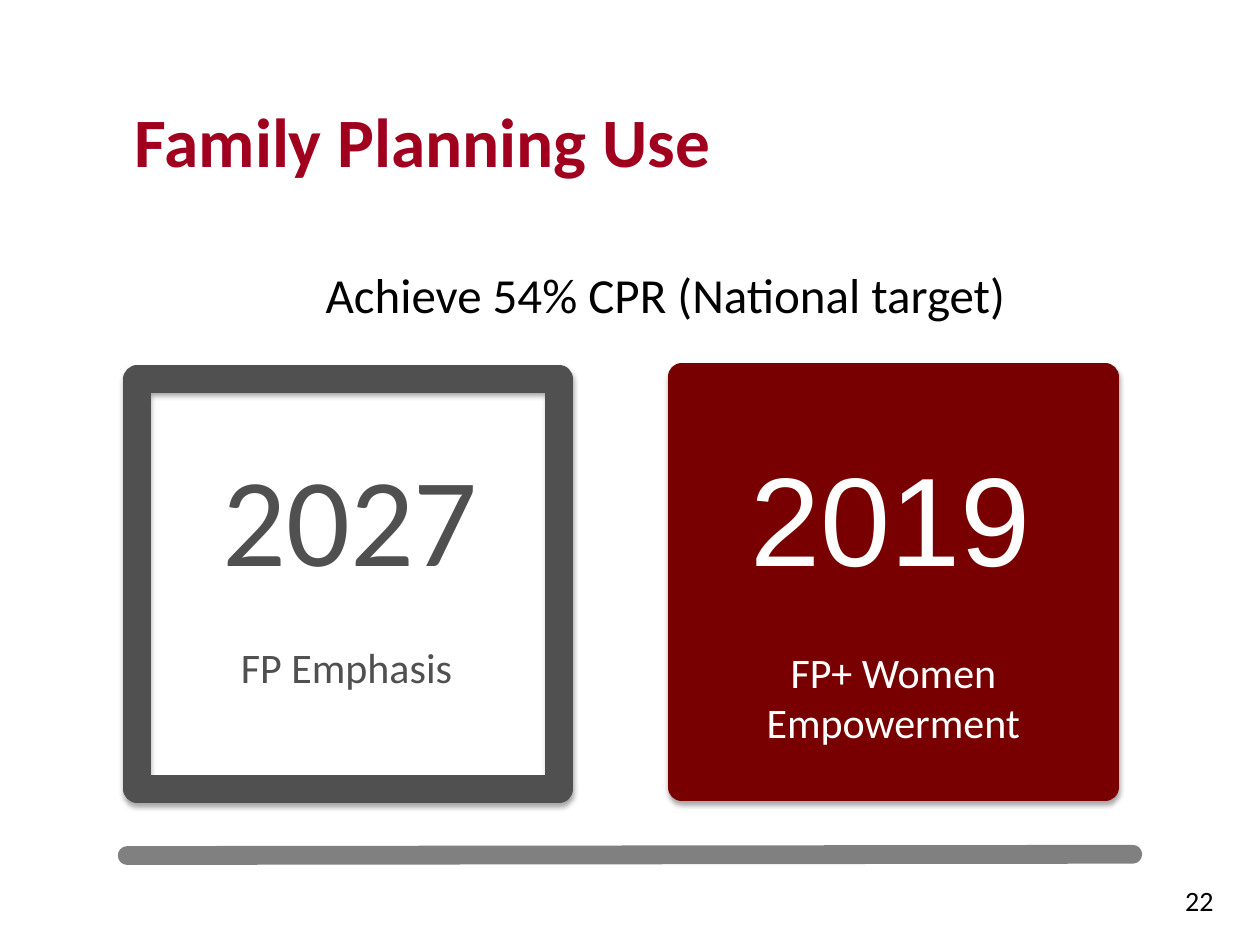
from dataclasses import dataclass

from lxml.etree import SubElement
from pptx import Presentation
from pptx.dml.color import RGBColor
from pptx.enum.shapes import MSO_CONNECTOR, MSO_SHAPE
from pptx.enum.text import PP_ALIGN
from pptx.oxml.ns import qn
from pptx.util import Inches, Pt


@dataclass(frozen=True)
class Theme:
    """Colours, fonts and type sizes of the slide."""
    title_red: str = "A0001E"
    card_red: str = "780000"
    card_grey: str = "505050"
    rule_grey: str = "808080"
    black: str = "000000"
    white: str = "FFFFFF"
    body_font: str = "Calibri"
    number_font: str = "Arial"
    title_size: float = 39.6
    target_size: float = 28
    year_size: float = 72
    label_size: float = 24
    page_size: float = 16
    frame_width: float = 16
    rule_width: float = 10.75


THEME = Theme()
COLUMNS, ROWS = 100, 75


def grid(*cells):
    """Turn grid cells, a tenth of an inch each, into lengths."""
    return [Inches(cell / 10) for cell in cells]


def add_text(page, area, text, size, color, align=PP_ALIGN.CENTER,
             font=THEME.body_font, bold=False):
    """Add a wrapped text box with one formatted paragraph."""
    frame = page.shapes.add_textbox(*grid(*area)).text_frame
    frame.word_wrap = True
    frame.text = text
    para = frame.paragraphs[0]
    para.alignment = align
    span = para.runs[0]
    span.font.name = font
    span.font.size = Pt(size)
    span.font.bold = bold
    span.font.color.rgb = RGBColor.from_string(color)


def style_line(line, color, width):
    """Give a line its colour, its width and a round join."""
    line.color.rgb = RGBColor.from_string(color)
    line.width = Pt(width)
    outline = line._get_or_add_ln()
    SubElement(outline, qn("a:round"))
    return outline


def add_soft_shadow(box):
    """Add a short downward shadow to a shape."""
    box.shadow.inherit = False
    effects = box._element.spPr.find(qn("a:effectLst"))
    shadow = SubElement(effects, qn("a:outerShdw"), blurRad=str(Pt(3.1)),
                        dist=str(Pt(1.8)), dir="5400000", rotWithShape="0")
    color = SubElement(shadow, qn("a:srgbClr"), val=THEME.black)
    SubElement(color, qn("a:alpha"), val="35000")


def add_card(page, area, color, filled):
    """Add a framed card, either solid or hollow."""
    box = page.shapes.add_shape(MSO_SHAPE.RECTANGLE, *grid(*area))
    if filled:
        box.fill.solid()
        box.fill.fore_color.rgb = RGBColor.from_string(color)
    else:
        box.fill.background()
    style_line(box.line, color, THEME.frame_width)
    add_soft_shadow(box)


def add_rule(page, start, end):
    """Add the thick footer rule with round ends."""
    rule = page.shapes.add_connector(
        MSO_CONNECTOR.STRAIGHT, *grid(*start), *grid(*end))
    style_line(rule.line, THEME.rule_grey, THEME.rule_width).set("cap", "rnd")
    SubElement(rule._element.spPr, qn("a:effectLst"))


def main():
    """Build the slide and save the deck."""
    deck = Presentation()
    deck.slide_width, deck.slide_height = grid(COLUMNS, ROWS)
    page = deck.slides.add_slide(deck.slide_layouts[6])

    add_text(page, (9.7, 7.3, 80.6, 7.7), "Family Planning Use",
             THEME.title_size, THEME.title_red, PP_ALIGN.LEFT, bold=True)
    add_text(page, (11.5, 20.5, 82.6, 5.7), "Achieve 54% CPR (National target)",
             THEME.target_size, THEME.black)
    add_rule(page, (10.1, 67.9), (89.9, 67.8))

    add_card(page, (10.9, 30.1, 33.5, 32.5), THEME.card_grey, False)
    add_text(page, (12.1, 34.5, 31.4, 13.1), "2027",
             THEME.year_size, THEME.card_grey)
    add_text(page, (12.4, 50.4, 30.2, 5), "FP Emphasis",
             THEME.label_size, THEME.card_grey)

    add_card(page, (54.1, 29.9, 33.6, 32.6), THEME.card_red, True)
    add_text(page, (54.4, 34.5, 32.6, 13.1), "2019",
             THEME.year_size, THEME.white, font=THEME.number_font)
    add_text(page, (55.8, 50.8, 30.2, 9.1), "FP+ Women Empowerment",
             THEME.label_size, THEME.white)

    add_text(page, (85.7, 69.6, 11.6, 2.7), "22",
             THEME.page_size, THEME.black, PP_ALIGN.RIGHT)
    deck.save("out.pptx")


if __name__ == "__main__":
    main()
